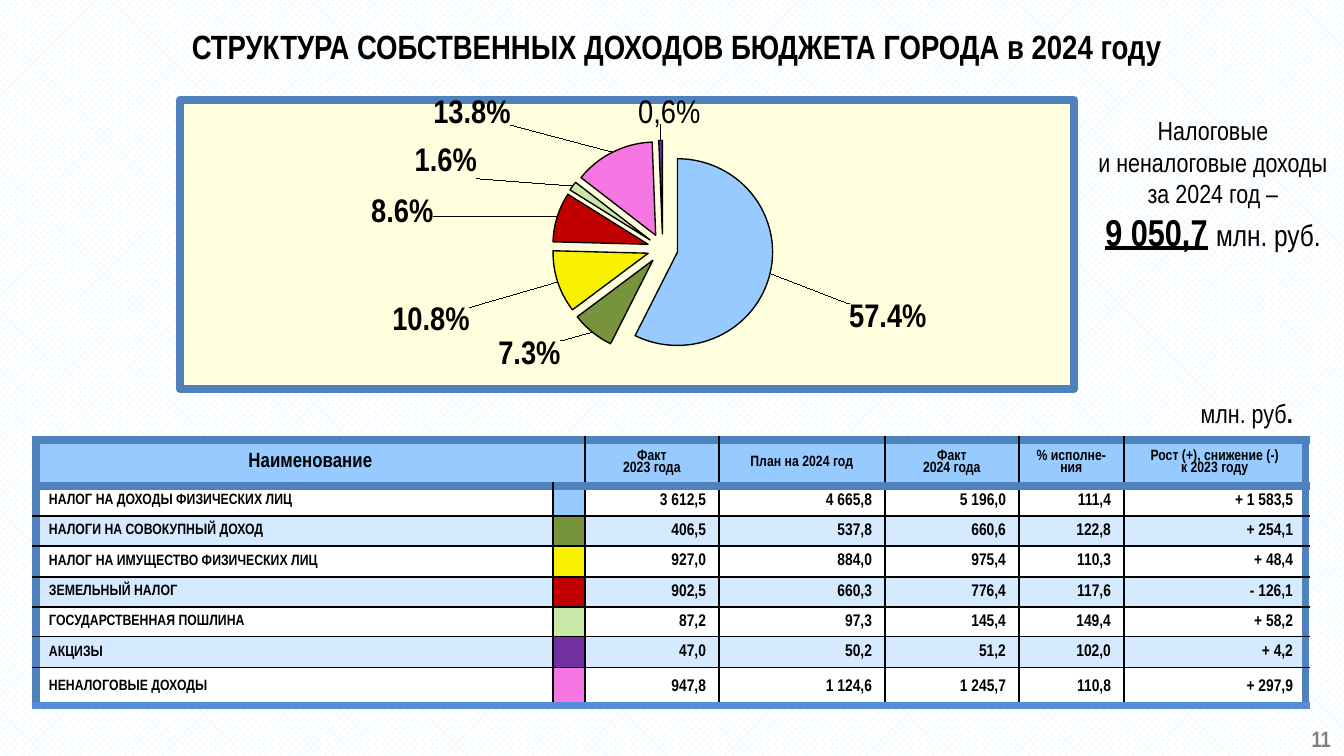
from dataclasses import dataclass

from lxml import etree
from pptx import Presentation
from pptx.chart.data import CategoryChartData
from pptx.dml.color import RGBColor
from pptx.enum.chart import XL_CHART_TYPE, XL_LABEL_POSITION
from pptx.enum.dml import MSO_PATTERN
from pptx.enum.text import MSO_ANCHOR, PP_ALIGN
from pptx.oxml import parse_xml
from pptx.oxml.ns import nsdecls, qn
from pptx.util import Pt

PIE = XL_CHART_TYPE.PIE
OUTSIDE = XL_LABEL_POSITION.OUTSIDE_END
CHECKS = MSO_PATTERN.LARGE_CHECKER_BOARD
TOP, MIDDLE = MSO_ANCHOR.TOP, MSO_ANCHOR.MIDDLE
LEFT, CENTER, RIGHT = PP_ALIGN.LEFT, PP_ALIGN.CENTER, PP_ALIGN.RIGHT
WIDTH, HEIGHT = 1344, 756
SCALE = 9144000 / WIDTH


@dataclass(frozen=True)
class Theme:
    font: str = "Arial Narrow"
    ink: str = "000000"
    grey: str = "808080"
    frame: str = "4F81BD"
    foot: str = "558ED5"
    head: str = "97CBFF"
    white: str = "FFFFFF"
    band: str = "D5EAFF"
    check: str = "E1F4FF"
    cream: str = "FFFFDD"
    title: float = 18
    total: float = 20
    unit: float = 16
    body: float = 14
    page: float = 11.9
    heading: float = 11
    figure: float = 9
    small: float = 8
    thick: float = 4.5
    thin: float = 1
    outline: float = 0.75


T = Theme()

# Income, colour, fact 2023, plan 2024, fact 2024, % done, change
INCOMES = [
    ("НАЛОГ НА ДОХОДЫ ФИЗИЧЕСКИХ ЛИЦ", "97CBFF", "3 612,5", "4 665,8", "5 196,0", "111,4", "+ 1 583,5"),
    ("НАЛОГИ НА СОВОКУПНЫЙ ДОХОД", "77933C", "406,5", "537,8", "660,6", "122,8", "+ 254,1"),
    ("НАЛОГ НА ИМУЩЕСТВО ФИЗИЧЕСКИХ ЛИЦ", "F8F200", "927,0", "884,0", "975,4", "110,3", "+ 48,4"),
    ("ЗЕМЕЛЬНЫЙ НАЛОГ", "C00000", "902,5", "660,3", "776,4", "117,6", "- 126,1"),
    ("ГОСУДАРСТВЕННАЯ ПОШЛИНА", "C9E7A7", "87,2", "97,3", "145,4", "149,4", "+ 58,2"),
    ("АКЦИЗЫ", "7030A0", "47,0", "50,2", "51,2", "102,0", "+ 4,2"),
    ("НЕНАЛОГОВЫЕ ДОХОДЫ", "F676E4", "947,8", "1 124,6", "1 245,7", "110,8", "+ 297,9"),
]
HEADINGS = ["Наименование", None, "Факт\n2023 года", "План на 2024 год", "Факт\n2024 года",
            "% исполне-ния", "Рост (+), снижение (-)\nк 2023 году"]
COLUMNS = [517, 32, 134, 166, 134, 105, 182]
ROWS = [46, 30, 30, 31, 30, 30, 31, 38]

# Share, row of its income, label shift in px
SHARES = [(57.4, 0, 72, 30), (7.3, 1, -29, 4), (10.8, 2, -85, 24), (8.6, 3, -117, 14),
          (1.6, 4, -94, -2), (13.8, 6, -98, -20), (0.6, 5, 9, -10)]


def px(length):
    return round(length * SCALE)


def rgb(value):
    return RGBColor.from_string(value)


def apply(target, values):
    for name, value in values.items():
        setattr(target, name, value)


def style(font, size, bold=False, color=T.ink, underline=None):
    apply(font, dict(name=T.font, size=Pt(size), bold=bold, underline=underline))
    font.color.rgb = rgb(color)


def write(frame, lines, align, spacing=None):
    """Each line is a list of (text, style values) runs."""
    for index, runs in enumerate(lines):
        paragraph = frame.add_paragraph() if index else frame.paragraphs[0]
        apply(paragraph, dict(alignment=align, line_spacing=spacing))
        for text, look in runs:
            run = paragraph.add_run()
            run.text = text
            style(run.font, **look)


def text_box(slide, box, lines, align, anchor=TOP, spacing=None):
    frame = slide.shapes.add_textbox(*map(px, box)).text_frame
    apply(frame, dict(word_wrap=True, vertical_anchor=anchor))
    write(frame, lines, align, spacing)


def total_note(slide, box):
    body = dict(size=T.body)
    text_box(slide, box, [
        [("Налоговые", body)],
        [("и неналоговые доходы за 2024 год –", body)],
        [("9 050,7", dict(size=T.total, bold=True, underline=True)),
         (" ", dict(size=T.total, bold=True)), ("млн. руб.", dict(size=T.unit))],
    ], CENTER)


def area_format(fill, border=None):
    line = (f'<a:ln w="{Pt(T.thick)}"><a:solidFill><a:srgbClr val="{border}"/></a:solidFill>'
            '<a:round/></a:ln>') if border else '<a:ln><a:noFill/></a:ln>'
    return parse_xml(f'<c:spPr {nsdecls("c", "a")}><a:solidFill><a:srgbClr val="{fill}"/>'
                     f'</a:solidFill>{line}</c:spPr>')


def manual_layout(**values):
    items = "".join(f'<c:{name} val="{value}"/>' for name, value in values.items())
    return parse_xml(f'<c:layout {nsdecls("c")}><c:manualLayout>{items}</c:manualLayout></c:layout>')


def share_chart(slide, box):
    data = CategoryChartData(number_format='0.0"%"')
    data.categories = [str(number + 1) for number in range(len(SHARES))]
    data.add_series("Series 1", [share[0] for share in SHARES])
    chart = slide.shapes.add_chart(PIE, *map(px, box), data).chart
    apply(chart, dict(has_legend=False, has_title=False))
    style(chart.font, T.title)
    plot = chart.plots[0]
    plot.vary_by_categories = True
    series = plot.series[0]

    # Common labels
    labels = series.data_labels
    apply(labels, dict(show_value=True, position=OUTSIDE, number_format='0.0"%"',
                       number_format_is_linked=False))
    style(labels.font, T.title, True)

    # Slices and their shifted labels
    for index, (_, income, dx, dy) in enumerate(SHARES):
        point = series.points[index]
        point.format.fill.solid()
        point.format.fill.fore_color.rgb = rgb(INCOMES[income][1])
        point.format.line.width = Pt(T.outline)
        point.format.line.color.rgb = rgb(T.ink)
        label = point.data_label
        if index == len(SHARES) - 1:
            write(label.text_frame, [[("0,6%", dict(size=T.title))]], CENTER)
        else:
            style(label.font, T.title, True)
        label.position = OUTSIDE
    for mark, (_, _, dx, dy) in zip(series._element.iter(qn("c:dLbl")), SHARES):
        mark.find(qn("c:idx")).addnext(
            manual_layout(x=round(dx / box[2], 2), y=round(dy / box[3], 2)))

    # Exploded pie, plot place and backgrounds
    explosion = parse_xml(f'<c:explosion {nsdecls("c")} val="16"/>')
    series._element.find(qn("c:dPt")).addprevious(explosion)
    root = chart._chartSpace.find(qn("c:chart"))
    root.addnext(area_format(T.cream, T.frame))
    area = root.find(qn("c:plotArea"))
    for old in area.findall(qn("c:layout")):
        area.remove(old)
    area.insert(0, manual_layout(layoutTarget="inner", xMode="edge", yMode="edge",
                                 x=0.08, y=0.14, w=0.92, h=0.75))
    area.append(area_format(T.cream))


def cell_borders(cell, row, column):
    last_row, last_column = len(ROWS) - 1, len(COLUMNS) - 1
    thin, thick = (T.ink, T.thin), (T.frame, T.thick)
    bottom = thick if row == 0 else (T.foot, T.thick) if row == last_row else thin
    sides = dict(lnL=thin if column else thick, lnR=thick if column == last_column else thin,
                 lnT=thick if row < 2 else thin, lnB=bottom)
    properties = cell._tc.get_or_add_tcPr()
    for side, (color, width) in sides.items():
        line = etree.SubElement(properties, qn(f"a:{side}"), w=str(Pt(width)))
        solid = etree.SubElement(line, qn("a:solidFill"))
        etree.SubElement(solid, qn("a:srgbClr"), val=color)


def fill_cell(cell, row, column, text, fill, size, align, spacing=None):
    cell_borders(cell, row, column)
    cell.fill.solid()
    cell.fill.fore_color.rgb = rgb(fill)
    apply(cell, dict(vertical_anchor=MIDDLE, margin_left=px(13), margin_right=px(13),
                     margin_top=px(1), margin_bottom=px(1)))
    if text:
        lines = [[(line, dict(size=size, bold=True))] for line in text.split("\n")]
        write(cell.text_frame, lines, align, spacing)
    else:
        paragraph = cell.text_frame.paragraphs[0]._p
        etree.SubElement(paragraph, qn("a:endParaRPr"), sz=str(round(size * 100)))


def income_table(slide, box):
    table = slide.shapes.add_table(len(ROWS), len(COLUMNS), *map(px, box)).table
    for column, width in zip(table.columns, COLUMNS):
        column.width = px(width)
    for row, height in zip(table.rows, ROWS):
        row.height = px(height)

    # Heading row
    for column, text in enumerate(HEADINGS):
        size = T.small if column else T.heading
        fill_cell(table.cell(0, column), 0, column, text, T.head, size, CENTER, 0.8)
    table.cell(0, 0).merge(table.cell(0, 1))

    # Income rows
    for row, (name, color, *figures) in enumerate(INCOMES, 1):
        fill = T.white if row % 2 else T.band
        fill_cell(table.cell(row, 0), row, 0, name, fill, T.small, LEFT)
        fill_cell(table.cell(row, 1), row, 1, "", color, T.small, LEFT)
        for column, figure in enumerate(figures, 2):
            fill_cell(table.cell(row, column), row, column, figure, fill, T.figure, RIGHT)


def income_slide(deck):
    slide = deck.slides.add_slide(deck.slide_layouts[6])
    backdrop = slide.background.fill
    backdrop.patterned()
    backdrop.pattern = CHECKS
    backdrop.fore_color.rgb, backdrop.back_color.rgb = rgb(T.check), rgb(T.white)

    income_table(slide, (36, 440, sum(COLUMNS), sum(ROWS)))
    total_note(slide, (1082, 108, 262, 153))
    text_box(slide, (27, 13, 1300, 58),
             [[("СТРУКТУРА СОБСТВЕННЫХ ДОХОДОВ БЮДЖЕТА ГОРОДА в 2024 году",
                dict(size=T.title, bold=True))]], CENTER, MIDDLE, 1.2)
    share_chart(slide, (176, 96, 902, 297))
    text_box(slide, (1110, 391, 196, 46),
             [[("млн. руб", dict(size=T.body)), (".", dict(size=T.body, bold=True))]], RIGHT)
    text_box(slide, (1269, 719, 75, 35),
             [[("11", dict(size=T.page, bold=True, color=T.grey))]], RIGHT)


def main():
    deck = Presentation()
    apply(deck, dict(slide_width=px(WIDTH), slide_height=px(HEIGHT)))
    income_slide(deck)
    deck.save("out.pptx")


if __name__ == "__main__":
    main()
